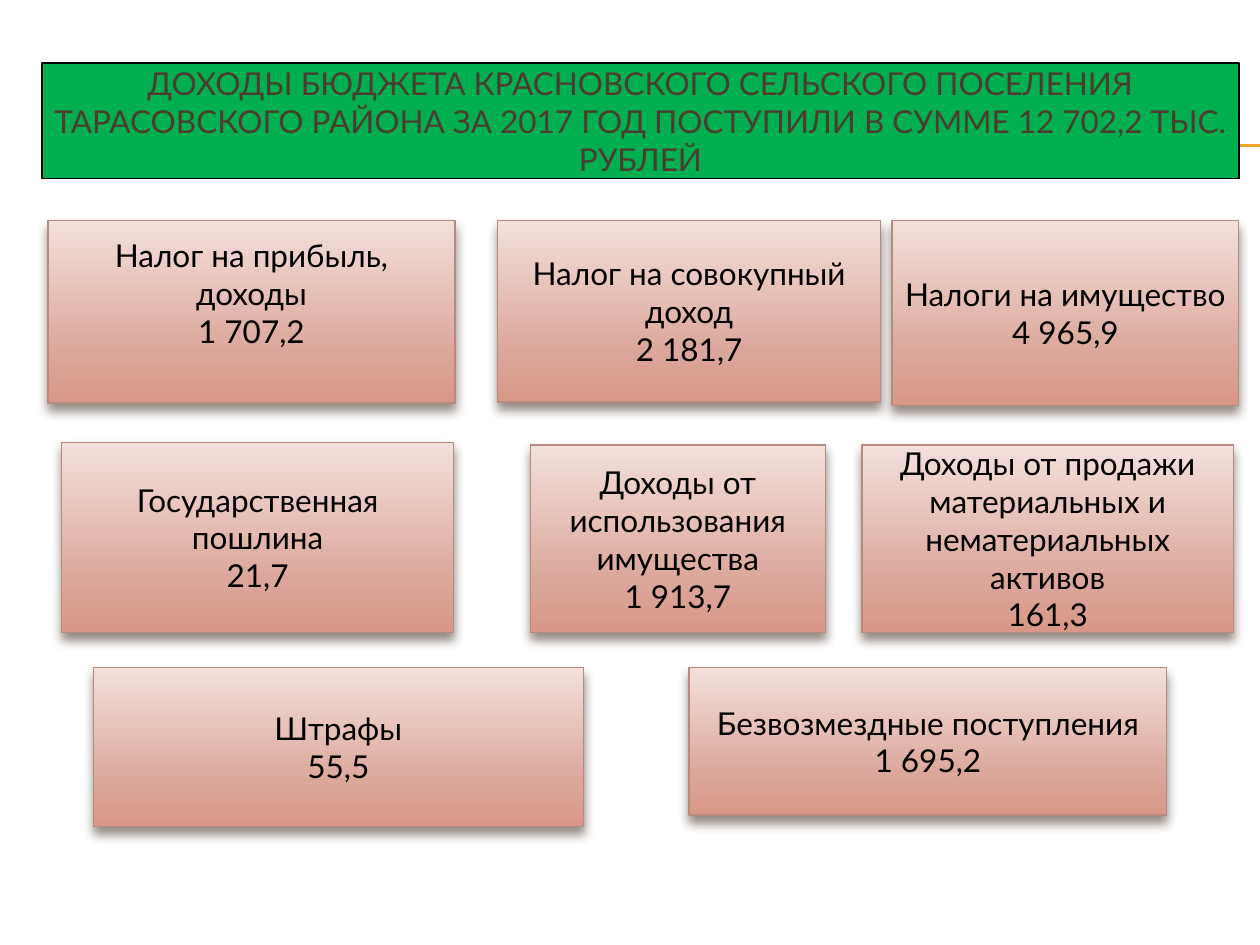
from copy import deepcopy

from lxml.etree import SubElement
from pptx import Presentation
from pptx.dml.color import RGBColor
from pptx.enum.shapes import MSO_CONNECTOR as CONNECTOR, MSO_SHAPE as SHAPE
from pptx.enum.text import MSO_ANCHOR as ANCHOR, PP_ALIGN as ALIGN
from pptx.oxml.ns import qn
from pptx.util import Pt

GREEN = RGBColor(0x00, 0xB0, 0x50)
BLACK = RGBColor(0x00, 0x00, 0x00)
BROWN = RGBColor(0x4E, 0x3B, 0x30)
ORANGE = RGBColor(0xF0, 0xA2, 0x2E)
BORDER = RGBColor(0xB5, 0x8B, 0x80)
GRADIENT = [
    (0, RGBColor(0xF3, 0xE0, 0xDB)),
    (0.72, RGBColor(0xDC, 0xA7, 0x9B)),
    (1, RGBColor(0xD8, 0x97, 0x87)),
]

FRAME_FORMAT = {
    "word_wrap": True,
    "vertical_anchor": ANCHOR.MIDDLE,
    "margin_left": Pt(6),
    "margin_right": Pt(6),
    "margin_top": Pt(3.6),
    "margin_bottom": Pt(3.6),
}
FONT_FORMAT = {"name": "Lato", "size": Pt(18)}

TITLE = ("ДОХОДЫ БЮДЖЕТА КРАСНОВСКОГО СЕЛЬСКОГО ПОСЕЛЕНИЯ ТАРАСОВСКОГО РАЙОНА "
         "ЗА 2017 ГОД ПОСТУПИЛИ В СУММЕ 12 702,2 ТЫС. РУБЛЕЙ")

# Income source, amount, (left, top, width, height), extra space below the text
INCOMES = [
    ("Налог на прибыль, доходы", "1 707,2", (27.4, 126, 232.6, 104.4), 21.6),
    ("Налог на совокупный доход", "2 181,7", (284.4, 126, 218.9, 103.7), 0),
    ("Доходы от использования имущества", "1 913,7", (303.1, 254.2, 168.5, 107.3), 0),
    ("Государственная пошлина", "21,7", (35.3, 252.7, 223.9, 108.7), 0),
    ("Штрафы", "55,5", (53.3, 381.6, 280.1, 90.7), 0),
    ("Безвозмездные поступления", "1 695,2", (393.8, 381.6, 272.9, 84.2), 0),
    ("Налоги на имущество", "4 965,9", (509.8, 126, 198, 105.8), 0),
    ("Доходы от продажи материальных и нематериальных активов", "161,3",
     (492.5, 254.2, 212.4, 107.3), 0),
]


def apply_format(target, values):
    for name, value in values.items():
        setattr(target, name, value)


def add_rule(slide, y):
    rule = slide.shapes.add_connector(
        CONNECTOR.STRAIGHT, Pt(40.3), Pt(y), Pt(720), Pt(y))
    rule.line.color.rgb = ORANGE
    rule.line.width = Pt(0.75)
    SubElement(rule._element.spPr, qn("a:effectLst"))


def add_box(slide, bounds, lines, text_color, border, border_width):
    box = slide.shapes.add_shape(SHAPE.RECTANGLE, *map(Pt, bounds))
    box.shadow.inherit = False
    box.line.color.rgb = border
    box.line.width = Pt(border_width)
    frame = box.text_frame
    apply_format(frame, FRAME_FORMAT)
    frame.text = "\n".join(lines)
    for paragraph in frame.paragraphs:
        paragraph.alignment = ALIGN.CENTER
        for run in paragraph.runs:
            apply_format(run.font, FONT_FORMAT)
            run.font.color.rgb = text_color
    return box


def fill_gradient(box):
    box.fill.gradient()
    box.fill.gradient_angle = 270  # counter-clockwise: runs top to bottom
    stops = box._element.spPr.find(".//" + qn("a:gsLst"))
    stops.append(deepcopy(stops[-1]))
    for stop, (position, color) in zip(box.fill.gradient_stops, GRADIENT):
        stop.position = position
        stop.color.rgb = color


def add_shadow(box):
    effects = box._element.spPr.find(qn("a:effectLst"))
    shadow = SubElement(effects, qn("a:outerShdw"), blurRad=str(Pt(6)),
                        dist=str(Pt(4)), dir="5400000", rotWithShape="0")
    color = SubElement(shadow, qn("a:srgbClr"), val=str(BROWN))
    SubElement(color, qn("a:alpha"), val="60000")


def add_income(slide, source, amount, bounds, space_below):
    box = add_box(slide, bounds, [source, amount], BLACK, BORDER, 0.79)
    box.text_frame.margin_bottom += Pt(space_below)
    fill_gradient(box)
    add_shadow(box)


def main():
    deck = Presentation()
    deck.slide_width, deck.slide_height = Pt(720), Pt(540)
    slide = deck.slides.add_slide(deck.slide_layouts[6])

    # Double rule behind the title
    for y in (82.8, 83.5):
        add_rule(slide, y)

    # Title band
    title = add_box(slide, (24, 36, 684, 66), [TITLE], BROWN, BLACK, 0.75)
    title.fill.solid()
    title.fill.fore_color.rgb = GREEN

    # Income boxes
    for income in INCOMES:
        add_income(slide, *income)

    deck.save("out.pptx")


if __name__ == "__main__":
    main()
